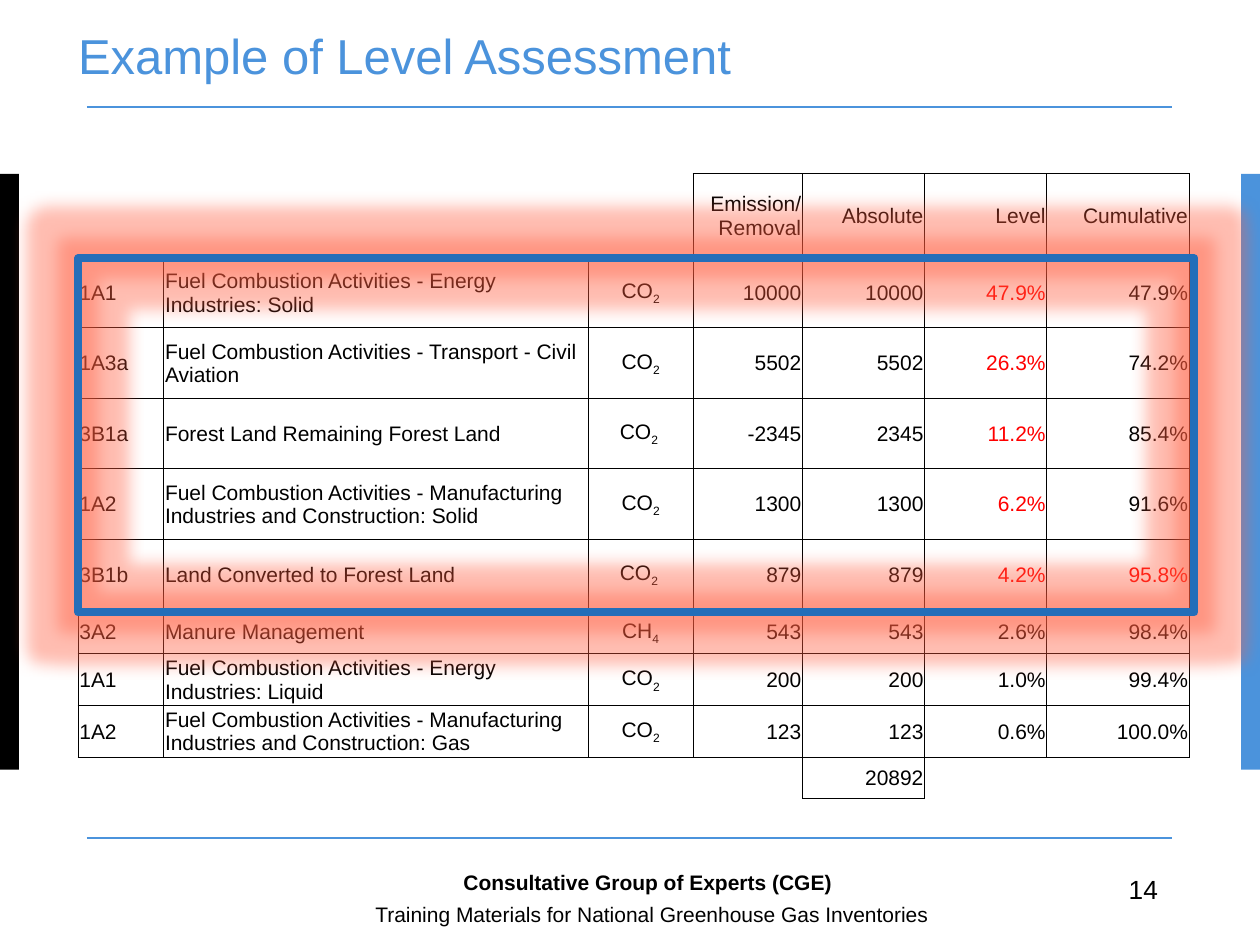
from lxml.etree import SubElement
from pptx import Presentation
from pptx.dml.color import RGBColor
from pptx.enum.shapes import MSO_CONNECTOR, MSO_SHAPE
from pptx.enum.text import MSO_ANCHOR, PP_ALIGN
from pptx.oxml import parse_xml
from pptx.oxml.ns import nsdecls, qn
from pptx.util import Inches, Pt


def color(value):
    return RGBColor.from_string(value)


def add_text(left, top, width, height, text, size, ink="000000", bold=False):
    box = slide.shapes.add_textbox(Inches(left), Inches(top), Inches(width), Inches(height))
    box.text_frame.word_wrap = True
    paragraph = box.text_frame.paragraphs[0]
    paragraph.text = text
    paragraph.font.name = "Arial"
    paragraph.font.size = Pt(size)
    paragraph.font.bold = bold
    paragraph.font.color.rgb = color(ink)
    return box.text_frame


presentation = Presentation()
presentation.slide_width = Inches(10)
presentation.slide_height = Inches(7.5)
slide = presentation.slides.add_slide(presentation.slide_layouts[6])

for left, fill in [(0, "000000"), (9.85, "4B93DC")]:
    side_bar = slide.shapes.add_shape(
        MSO_SHAPE.RECTANGLE, Inches(left), Inches(1.38), Inches(0.15), Inches(4.73))
    side_bar.shadow.inherit = False
    side_bar.fill.solid()
    side_bar.fill.fore_color.rgb = color(fill)
    side_bar.line.fill.background()

for y in (0.85, 6.65):
    rule = slide.shapes.add_connector(
        MSO_CONNECTOR.STRAIGHT, Inches(0.69), Inches(y), Inches(9.3), Inches(y))
    rule.line.color.rgb = color("4B93DC")
    rule.line.width = Pt(1)
    SubElement(rule._element.spPr, qn("a:effectLst"))

FUEL = "Fuel Combustion Activities - "
rows = [
    ("", "", "", "Emission/ Removal", "Absolute", "Level", "Cumulative"),
    ("1A1", FUEL + "Energy Industries: Solid", "CO2", "10000", "10000", "47.9%", "47.9%"),
    ("1A3a", FUEL + "Transport - Civil Aviation", "CO2", "5502", "5502", "26.3%", "74.2%"),
    ("3B1a", "Forest Land Remaining Forest Land", "CO2 ", "-2345", "2345", "11.2%", "85.4%"),
    ("1A2", FUEL + "Manufacturing Industries and Construction: Solid", "CO2",
     "1300", "1300", "6.2%", "91.6%"),
    ("3B1b", "Land Converted to Forest Land", "CO2 ", "879", "879", "4.2%", "95.8%"),
    ("3A2", "Manure Management", "CH4", "543", "543", "2.6%", "98.4%"),
    ("1A1", FUEL + "Energy Industries: Liquid", "CO2", "200", "200", "1.0%", "99.4%"),
    ("1A2", FUEL + "Manufacturing Industries and Construction: Gas", "CO2",
     "123", "123", "0.6%", "100.0%"),
    ("", "", "", "", "20892", "", ""),
]
column_widths = [0.68, 3.37, 0.83, 0.87, 0.97, 0.97, 1.13]
row_heights = [0.66] + [0.56] * 5 + [0.35, 0.41, 0.41, 0.33]
alignments = [PP_ALIGN.LEFT] * 2 + [PP_ALIGN.CENTER] + [PP_ALIGN.RIGHT] * 4
red_cells = {(r, 5) for r in range(1, 6)} | {(5, 6)}
filled = {(r, c) for r, row in enumerate(rows) for c, text in enumerate(row) if text}
sides = {"L": (0, -1), "R": (0, 1), "T": (-1, 0), "B": (1, 0)}

assessment = slide.shapes.add_table(
    len(rows), len(column_widths), Inches(0.62), Inches(1.38),
    Inches(sum(column_widths)), Inches(sum(row_heights))).table
assessment.first_row = False
assessment.horz_banding = False
for column, width in zip(assessment.columns, column_widths):
    column.width = Inches(width)
for row, height in zip(assessment.rows, row_heights):
    row.height = Inches(height)

for r, row in enumerate(rows):
    for c, text in enumerate(row):
        cell = assessment.cell(r, c)
        cell.vertical_anchor = MSO_ANCHOR.MIDDLE
        cell.margin_left = cell.margin_right = cell.margin_top = Inches(0.01)
        cell.margin_bottom = 0
        paragraph = cell.text_frame.paragraphs[0]
        paragraph.alignment = alignments[c]
        paragraph.font.name = "Arial"
        paragraph.font.size = Pt(12)
        paragraph.font.color.rgb = color("FF0000" if (r, c) in red_cells else "000000")
        if c == 2 and text:
            paragraph.add_run().text = text[:2]
            subscript = paragraph.add_run()
            subscript.text = text[2:]
            subscript.font._element.set("baseline", "-25000")
        elif text:
            paragraph.add_run().text = text
        properties = cell._tc.get_or_add_tcPr()
        for side, (down, across) in sides.items():
            border = SubElement(properties, qn(f"a:ln{side}"), w=str(Pt(0.5)))
            if filled & {(r, c), (r + down, c + across)}:
                SubElement(SubElement(border, qn("a:solidFill")), qn("a:srgbClr"), val="000000")
            else:
                SubElement(border, qn("a:noFill"))
        cell.fill.background()

key_categories = slide.shapes.add_shape(
    MSO_SHAPE.RECTANGLE, Inches(0.62), Inches(2.05), Inches(8.86), Inches(2.81))
key_categories.shadow.inherit = False
key_categories.fill.background()
key_categories.line.color.rgb = color("246EB9")
key_categories.line.width = Pt(4.5)
SubElement(key_categories.line._get_or_add_ln(), qn("a:round"))
key_categories._element.spPr.find(qn("a:effectLst")).append(parse_xml(
    f'<a:glow {nsdecls("a")} rad="{Inches(0.25)}"><a:srgbClr val="FF5B3D">'
    '<a:alpha val="40000"/></a:srgbClr></a:glow>'))

title = add_text(0.62, 0.29, 8.66, 0.55, "Example of Level Assessment", 28, "4B93DC")
title.margin_left = title.margin_right = title.margin_top = title.margin_bottom = 0
title.vertical_anchor = MSO_ANCHOR.MIDDLE
title.paragraphs[0].line_spacing = Pt(15)

add_text(8.86, 6.88, 0.47, 0.35, "14", 15)
add_text(2.88, 7.11, 5.72, 0.2, "Training Materials for National Greenhouse Gas Inventories", 12)
add_text(3.58, 6.85, 3.39, 0.27, "Consultative Group of Experts (CGE)", 12, bold=True)

presentation.save("out.pptx")
